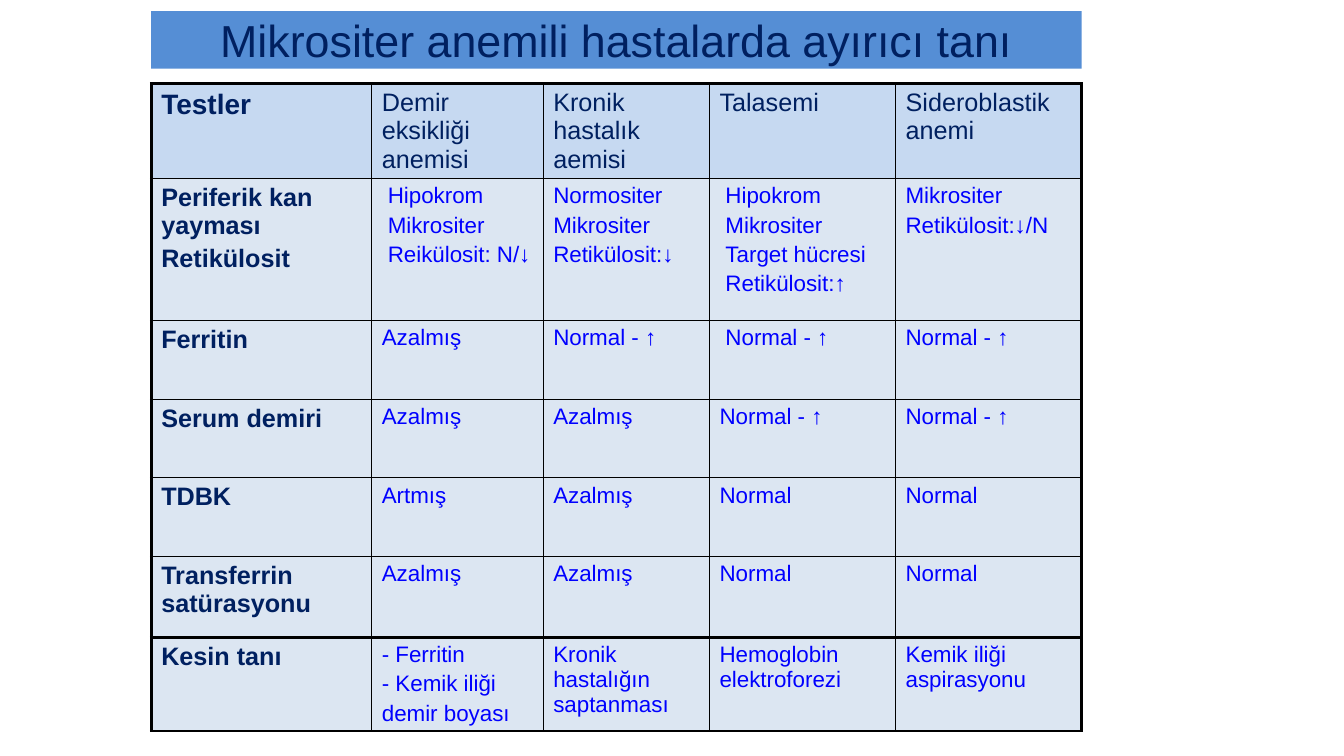
import lxml.etree
import pptx
import pptx.dml.color
import pptx.enum.text
import pptx.oxml.ns
import pptx.util

LEFT, WIDTH = 3.81, 23.45
COLUMN_WIDTHS = [5.56, 4.32, 4.19, 4.69, 4.69]
ROW_HEIGHTS = [2.39, 3.58, 1.98, 1.98, 1.98, 2.04, 2.36]
THIN, THICK = 1, 2.25
NAVY, BLUE = "002060", "0000FF"
TITLE_FILL, HEADER_FILL, BODY_FILL = "558ED5", "C6D9F1", "DCE6F2"
INDENTED = {(1, 1), (1, 3), (2, 3)}
TESTS = [
    ["Testler", "Demir eksikliği anemisi", "Kronik hastalık aemisi",
     "Talasemi", "Sideroblastik anemi"],
    ["Periferik kan yayması\nRetikülosit", "Hipokrom\nMikrositer\nReikülosit: N/↓",
     "Normositer\nMikrositer\nRetikülosit:↓",
     "Hipokrom\nMikrositer\nTarget hücresi\nRetikülosit:↑",
     "Mikrositer\nRetikülosit:↓/N"],
    ["Ferritin", "Azalmış", "Normal - ↑", "Normal - ↑", "Normal - ↑"],
    ["Serum demiri", "Azalmış", "Azalmış", "Normal - ↑", "Normal - ↑"],
    ["TDBK", "Artmış", "Azalmış", "Normal", "Normal"],
    ["Transferrin satürasyonu", "Azalmış", "Azalmış", "Normal", "Normal"],
    ["Kesin tanı", "- Ferritin\n- Kemik iliği\ndemir boyası",
     "Kronik hastalığın saptanması", "Hemoglobin elektroforezi",
     "Kemik iliği aspirasyonu"],
]


def color(code):
    return pptx.dml.color.RGBColor.from_string(code)


class DiagnosisSlide:
    """Holds the style and the current slide."""

    font_name = "Arial"

    def __init__(self, deck):
        self.slide = deck.slides.add_slide(deck.slide_layouts[5])

    def fill(self, target, code):
        target.fill.solid()
        target.fill.fore_color.rgb = color(code)

    def style(self, paragraph, size, code, bold=False):
        for run in paragraph.runs:
            run.font.name = self.font_name
            run.font.size = pptx.util.Pt(size)
            run.font.bold = bold
            run.font.color.rgb = color(code)

    def title(self, text, top, height):
        heading = self.slide.shapes.title
        heading.left, heading.top = pptx.util.Cm(LEFT), pptx.util.Cm(top)
        heading.width, heading.height = pptx.util.Cm(WIDTH), pptx.util.Cm(height)
        self.fill(heading, TITLE_FILL)
        frame = heading.text_frame
        frame.text = text
        frame.word_wrap = True
        frame.auto_size = pptx.enum.text.MSO_AUTO_SIZE.NONE
        frame.vertical_anchor = pptx.enum.text.MSO_ANCHOR.MIDDLE
        frame.paragraphs[0].alignment = pptx.enum.text.PP_ALIGN.CENTER
        self.style(frame.paragraphs[0], 32, NAVY)

    def borders(self, cell, widths):
        properties = cell._tc.get_or_add_tcPr()
        for side, width in zip("LRTB", widths):
            line = lxml.etree.SubElement(
                properties, pptx.oxml.ns.qn(f"a:ln{side}"), w=str(pptx.util.Pt(width)))
            solid = lxml.etree.SubElement(line, pptx.oxml.ns.qn("a:solidFill"))
            lxml.etree.SubElement(solid, pptx.oxml.ns.qn("a:srgbClr"), val="000000")

    def cell_text(self, cell, text, size, code, bold, indented):
        cell.text_frame.text = text
        for number, paragraph in enumerate(cell.text_frame.paragraphs):
            if number:
                paragraph.space_before = pptx.util.Pt(size * 0.2)
            if indented:
                paragraph._p.get_or_add_pPr().set("marL", str(pptx.util.Cm(0.15)))
            self.style(paragraph, size, code, bold)

    def table(self, rows, top):
        grid = self.slide.shapes.add_table(
            len(rows), len(COLUMN_WIDTHS), pptx.util.Cm(LEFT), pptx.util.Cm(top),
            pptx.util.Cm(WIDTH), pptx.util.Cm(sum(ROW_HEIGHTS))).table
        grid.horz_banding = False
        for column, width in zip(grid.columns, COLUMN_WIDTHS):
            column.width = pptx.util.Cm(width)
        for row, height in zip(grid.rows, ROW_HEIGHTS):
            row.height = pptx.util.Cm(height)
        last_row, last_column = len(rows) - 1, len(COLUMN_WIDTHS) - 1
        for r, texts in enumerate(rows):
            for c, text in enumerate(texts):
                cell = grid.cell(r, c)
                heavy = (c == 0, c == last_column, r in (0, last_row), r >= last_row - 1)
                self.borders(cell, [THICK if edge else THIN for edge in heavy])
                self.fill(cell, HEADER_FILL if r == 0 else BODY_FILL)
                labels = r == 0 or c == 0
                size = 20 if r == c == 0 else 18 if labels else 16
                self.cell_text(cell, text, size, NAVY if labels else BLUE,
                               c == 0, (r, c) in INDENTED)


def main():
    deck = pptx.Presentation()
    deck.slide_width, deck.slide_height = pptx.util.Cm(33.87), pptx.util.Cm(19.05)
    diagnosis = DiagnosisSlide(deck)
    diagnosis.title("Mikrositer anemili hastalarda ayırıcı tanı", 0.28, 1.45)
    diagnosis.table(TESTS, 2.11)
    deck.save("out.pptx")


if __name__ == "__main__":
    main()
